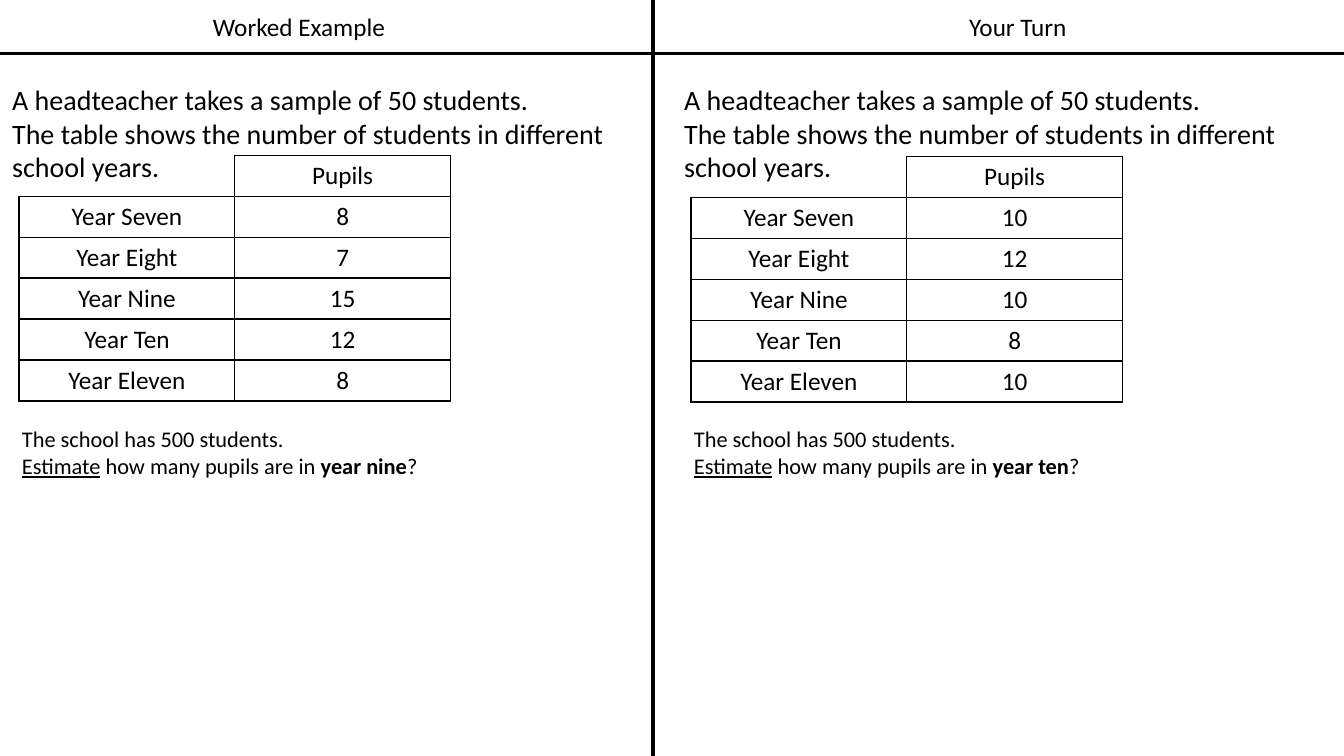
import pptx
import pptx.dml.color
import pptx.enum.shapes
import pptx.enum.text
import pptx.oxml.ns
import pptx.util
from lxml import etree

BLACK = pptx.dml.color.RGBColor(0, 0, 0)
ALIGN = pptx.enum.text.PP_ALIGN
HALF = 50
YEARS = ["Year Seven", "Year Eight", "Year Nine", "Year Ten", "Year Eleven"]
INTRO = [
    [("A headteacher takes a sample of 50 students.", {})],
    [("The table shows the number of students in different school years.", {})],
]
PANELS = [
    ("Worked Example", 15, 20.53, [8, 7, 15, 12, 8], "year nine"),
    ("Your Turn", 68.49, 20.67, [10, 12, 10, 8, 10], "year ten"),
]


def add_run(p, text, size=18, bold=False, underline=False, color=BLACK, font="Calibri"):
    r = p.add_run()
    r.text = text
    r.font.name = font
    r.font.size = pptx.util.Pt(size)
    r.font.bold = bold
    r.font.underline = underline
    r.font.color.rgb = color
    return r


class Board:
    """Draws black Calibri elements on one slide, placed in percent of its size."""

    def __init__(self, prs):
        self.prs = prs
        self.s = prs.slides.add_slide(prs.slide_layouts[6])

    def x(self, share):
        return int(self.prs.slide_width * share / 100)

    def y(self, share):
        return int(self.prs.slide_height * share / 100)

    def box(self, left, top, width, height):
        return self.x(left), self.y(top), self.x(width), self.y(height)

    def text(self, place, paragraphs, size, align=ALIGN.LEFT, inset=True):
        tf = self.s.shapes.add_textbox(*self.box(*place)).text_frame
        tf.word_wrap = True
        if not inset:
            tf.margin_left = tf.margin_right = tf.margin_top = tf.margin_bottom = 0
        for i, runs in enumerate(paragraphs):
            p = tf.add_paragraph() if i else tf.paragraphs[0]
            p.alignment = align
            for text, fmt in runs:
                add_run(p, text, size=size, **fmt)

    def line(self, x1, y1, x2, y2):
        sp = self.s.shapes.add_connector(
            pptx.enum.shapes.MSO_CONNECTOR.STRAIGHT,
            self.x(x1), self.y(y1), self.x(x2), self.y(y2))
        sp.line.color.rgb = BLACK
        sp.line.width = pptx.util.Pt(2.5)
        etree.SubElement(sp._element.spPr, pptx.oxml.ns.qn("a:effectLst"))

    def border(self, cell, sides):
        qn = pptx.oxml.ns.qn
        tcPr = cell._tc.get_or_add_tcPr()
        for side in "LRTB":
            ln = etree.SubElement(tcPr, qn(f"a:ln{side}"), w=str(pptx.util.Pt(1)))
            if side in sides:
                fill = etree.SubElement(ln, qn("a:solidFill"))
                etree.SubElement(fill, qn("a:srgbClr"), val=str(BLACK))
            else:
                etree.SubElement(ln, qn("a:noFill"))

    def table(self, place, rows):
        table = self.s.shapes.add_table(len(rows), len(rows[0]), *self.box(*place)).table
        table.first_row = table.horz_banding = False
        for i, row in enumerate(rows):
            for j, value in enumerate(row):
                cell = table.cell(i, j)
                self.border(cell, "LRTB" if value else "RB")
                cell.fill.background()
                if value:
                    p = cell.text_frame.paragraphs[0]
                    p.alignment = ALIGN.CENTER
                    add_run(p, value)


def main():
    prs = pptx.Presentation()
    prs.slide_width = pptx.util.Inches(13.33)
    prs.slide_height = pptx.util.Inches(7.5)
    board = Board(prs)
    board.line(48.6, 0, 48.6, 100)
    board.line(-0.23, 7.07, 100.23, 7.07)
    for i, (title, title_left, table_top, pupils, year) in enumerate(PANELS):
        left = 0.9 + i * HALF
        question = [
            [("The school has 500 students.", {})],
            [("Estimate", {"underline": True}), (" how many pupils are in ", {}),
             (year, {"bold": True}), ("?", {})],
        ]
        rows = [("", "Pupils")] + [(y, str(n)) for y, n in zip(YEARS, pupils)]
        board.text((title_left, 0.8, 14.48, 5.33), [[(title, {})]], 18, ALIGN.CENTER)
        board.text((left, 10.93, 45.38, 18), INTRO, 20, inset=False)
        board.table((left + 0.52, table_top, 32.1, 32.53), rows)
        board.text((left, 55.6, 40.58, 8.53), question, 16)
    prs.save("out.pptx")


if __name__ == "__main__":
    main()
